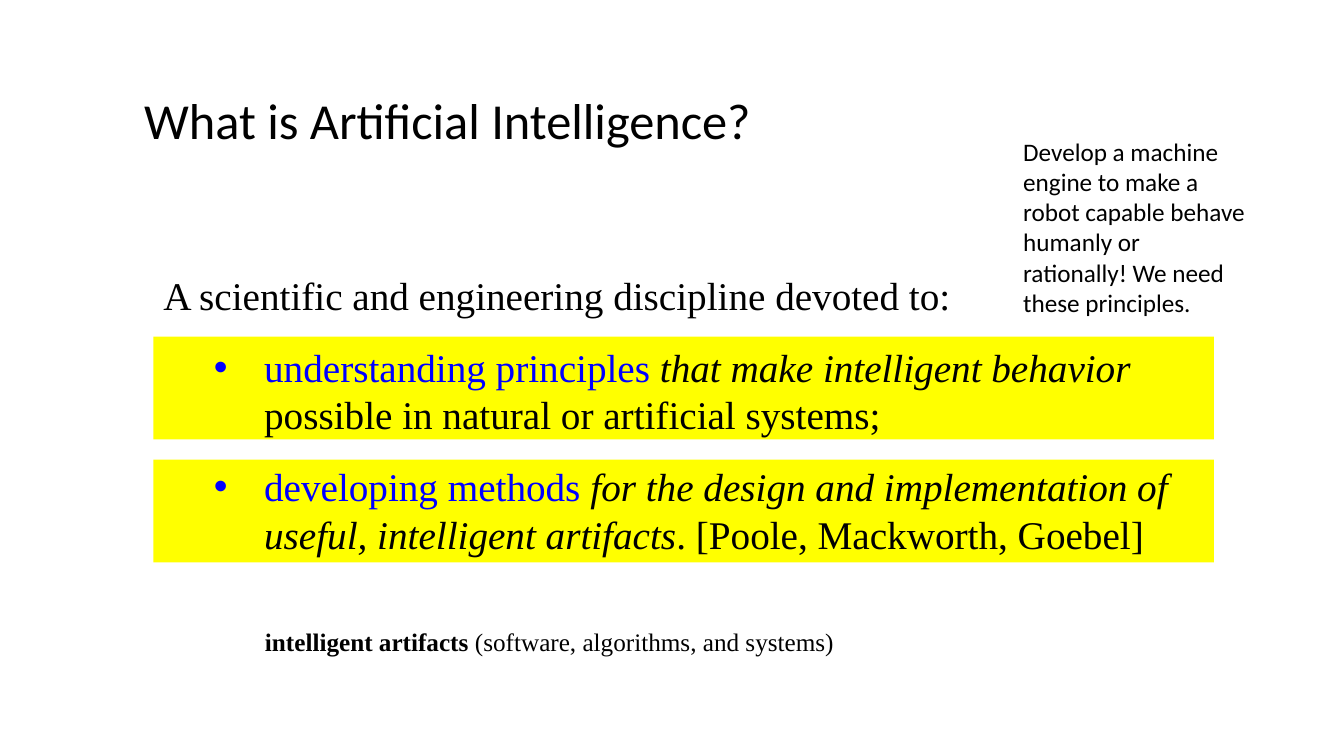
import pptx
import pptx.util
import pptx.dml.color
import pptx.enum.text
import lxml.etree

Inch = pptx.util.Inches
Pt = pptx.util.Pt
Text = pptx.enum.text
BLACK, BLUE, GOLD = "000000", "0000FF", "FFFF00"
SERIF, SANS = "Times New Roman", "Calibri"
LEFT, WIDE = 1.52, 10.52


def tint(hue):
    return pptx.dml.color.RGBColor.from_string(hue)


def write(para, runs, font, size):
    para.alignment = Text.PP_ALIGN.LEFT
    para.space_before = Pt(0)
    for words, hue, style in runs:
        run = para.add_run()
        run.text = words
        run.font.name = font
        run.font.size = Pt(size)
        run.font.color.rgb = tint(hue)
        run.font.bold = style == "bold"
        run.font.italic = style == "italic"


deck = pptx.Presentation()
deck.slide_width, deck.slide_height = Inch(13.33), Inch(7.5)
slide = deck.slides.add_slide(deck.slide_layouts[1])
shapes = slide.shapes
title, body = slide.placeholders

# Yellow bands, moved behind the list
for row in range(2):
    band = shapes.add_shape(1, Inch(LEFT), Inch(3.34 + 1.22 * row),
                            Inch(WIDE), Inch(1.02))
    band.shadow.inherit = False
    band.fill.solid()
    band.fill.fore_color.rgb = tint(GOLD)
    band.line.fill.background()
    shapes.element.insert(2 + row, band.element)

# Title, definition list, footnote and side note
note = shapes.add_textbox(0, 0, 0, 0)
side = shapes.add_textbox(0, 0, 0, 0)
boxes = [
    (title, (1.33, 0.83, 6.28, 0.71), False, SANS, 36, [
        [("What is Artificial Intelligence?", BLACK, "")]]),
    (body, (LEFT, 2.64, WIDE, 2.96), True, SERIF, 28, [
        [("A scientific and engineering discipline devoted to:", BLACK, "")],
        [("understanding principles ", BLUE, ""),
         ("that make intelligent behavior ", BLACK, "italic"),
         ("possible in natural or artificial systems;", BLACK, "")],
        [("developing methods ", BLUE, ""),
         ("for the design and implementation of useful, "
          "intelligent artifacts", BLACK, "italic"),
         (". [Poole, Mackworth, Goebel]", BLACK, "")]]),
    (note, (2.53, 6.16, 5.9, 0.4), False, SERIF, 18, [
        [("intelligent artifacts", BLACK, "bold"),
         (" (software, algorithms, and systems)", BLACK, "")]]),
    (side, (10.05, 1.3, 2.4, 1.92), True, SANS, 18, [
        [("Develop a machine engine to make a robot capable behave humanly "
          "or rationally! We need these principles.", BLACK, "")]]),
]
for box, place, wrap, font, size, paras in boxes:
    box.left, box.top, box.width, box.height = map(Inch, place)
    frame = box.text_frame
    frame.word_wrap = wrap
    frame.auto_size = Text.MSO_AUTO_SIZE.SHAPE_TO_FIT_TEXT
    frame.vertical_anchor = Text.MSO_ANCHOR.TOP
    for i, runs in enumerate(paras):
        para = frame.add_paragraph() if i else frame.paragraphs[0]
        write(para, runs, font, size)

# Spacing, indents and bullets of the list
main = "{http://schemas.openxmlformats.org/drawingml/2006/main}"
for i, para in enumerate(body.text_frame.paragraphs):
    para.space_after = Pt(18)
    props = para._p.get_or_add_pPr()
    props.set("marL", str(Inch(1) if i else 0))
    props.set("indent", str(Inch(-0.5) if i else 0))
    if i:
        lxml.etree.SubElement(props, main + "buFont", typeface="Arial")
        lxml.etree.SubElement(props, main + "buChar", char="•")
    else:
        lxml.etree.SubElement(props, main + "buNone")

deck.save("out.pptx")
